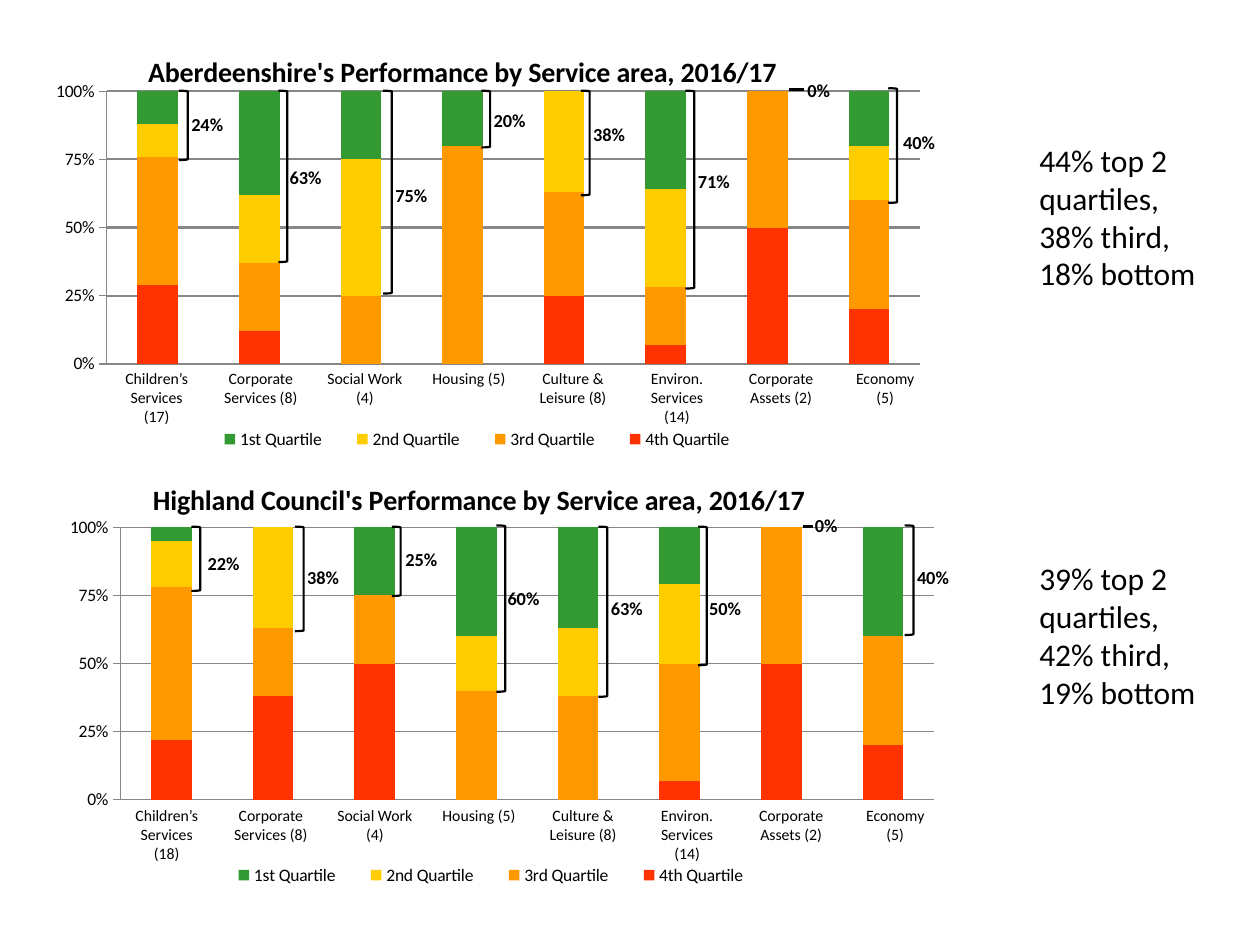
from lxml import etree
from pptx import Presentation
from pptx import util as u
from pptx.chart.data import CategoryChartData
from pptx.dml.color import RGBColor
from pptx.enum import chart as charts, shapes, text
from pptx.oxml.ns import qn

Inches, Pt = u.Inches, u.Pt
COLORS = {
    "ink": "000000", "grid": "868686",
    "4th Quartile": "FF3300", "3rd Quartile": "FF9900",
    "2nd Quartile": "FFCC00", "1st Quartile": "339933",
}
NO_GRID_STYLE = "{2D5ABB26-0587-4C30-8999-92F81FD0307C}"
CHART_SIZE = (7.22, 3.43)
TABLE_SIZE = (6.61, 0.67)
BRACKET_WIDTH = 0.07

# Each mark: bracket left, top and height, then its share and the label's left and top.
# A mark without height is a dash.
PANELS = [
    {
        "title": "Aberdeenshire's Performance by Service area, 2016/17",
        "chart_at": (0.32, 0.21), "title_at": (0.113, 0.05), "grid_width": 1.25,
        "values": {
            "4th Quartile": (0.29, 0.12, 0, 0, 0.25, 0.07, 0.5, 0.2),
            "3rd Quartile": (0.47, 0.25, 0.25, 0.8, 0.38, 0.21, 0.5, 0.4),
            "2nd Quartile": (0.12, 0.25, 0.5, 0, 0.38, 0.36, 0, 0.2),
            "1st Quartile": (0.12, 0.38, 0.25, 0.2, 0, 0.36, 0, 0.2),
        },
        "table_at": (0.83, 2.88), "children_count": 17,
        "summary": "44% top 2 quartiles, 38% third, 18% bottom", "summary_top": 1.07,
        "dash": (0.12, 1.75),
        "marks": [
            (1.42, 0.72, 0.55, "24%", 1.42, 0.85),
            (2.21, 0.72, 1.36, "63%", 2.2, 1.27),
            (3.04, 0.72, 1.61, "75%", 3.04, 1.41),
            (3.82, 0.72, 0.45, "20%", 3.82, 0.82),
            (4.61, 0.72, 0.83, "38%", 4.61, 0.93),
            (5.44, 0.72, 1.57, "71%", 5.44, 1.3),
            (6.26, 0.71, 0, "0%", 6.31, 0.58),
            (7.05, 0.7, 0.91, "40%", 7.07, 0.99),
        ],
    },
    {
        "title": "Highland Council's Performance by Service area, 2016/17",
        "chart_at": (0.43, 3.67), "title_at": (0.103, 0.03), "grid_width": 0.75,
        "values": {
            "4th Quartile": (0.22, 0.38, 0.5, 0, 0, 0.07, 0.5, 0.2),
            "3rd Quartile": (0.56, 0.25, 0.25, 0.4, 0.38, 0.43, 0.5, 0.4),
            "2nd Quartile": (0.17, 0.38, 0, 0.2, 0.25, 0.29, 0, 0),
            "1st Quartile": (0.06, 0, 0.25, 0.4, 0.38, 0.21, 0, 0.4),
        },
        "table_at": (0.91, 6.35), "children_count": 18,
        "summary": "39% top 2 quartiles, 42% third, 19% bottom", "summary_top": 4.39,
        "dash": (0.08, 1.5),
        "marks": [
            (1.52, 4.18, 0.51, "22%", 1.55, 4.33),
            (2.34, 4.18, 0.83, "38%", 2.34, 4.44),
            (3.11, 4.18, 0.55, "25%", 3.12, 4.3),
            (3.94, 4.17, 1.32, "60%", 3.93, 4.61),
            (4.75, 4.18, 1.35, "63%", 4.75, 4.69),
            (5.54, 4.18, 1.1, "50%", 5.53, 4.69),
            (6.37, 4.18, 0, "0%", 6.37, 4.03),
            (7.18, 4.17, 0.87, "40%", 7.18, 4.44),
        ],
    },
]


def inches(*lengths):
    return [Inches(length) for length in lengths]


def set_font(font, size, bold=False):
    formats = {"name": "Calibri", "size": Pt(size), "bold": bold}
    for name, value in formats.items():
        setattr(font, name, value)
    font.color.rgb = RGBColor.from_string(COLORS["ink"])


def set_line(line, color, width):
    line.color.rgb = RGBColor.from_string(COLORS[color])
    line.width = Pt(width)


def place_part(part, index, target=None, **fractions):
    """Fix a chart part's position as fractions of the chart."""
    for old in part.findall(qn("c:layout")):
        part.remove(old)
    layout = etree.Element(qn("c:layout"))
    part.insert(index, layout)
    manual = etree.SubElement(layout, qn("c:manualLayout"))
    settings = {"layoutTarget": target} if target else {}
    settings.update(xMode="edge", yMode="edge", **fractions)
    for name, value in settings.items():
        etree.SubElement(manual, qn(f"c:{name}")).set("val", str(value))


def add_quartile_chart(page, panel):
    data = CategoryChartData(number_format="0%")
    data.categories = [str(number) for number in range(1, 9)]
    for name, values in panel["values"].items():
        data.add_series(name, values)
    chart = page.shapes.add_chart(charts.XL_CHART_TYPE.COLUMN_STACKED,
                                  *inches(*panel["chart_at"], *CHART_SIZE), data).chart
    set_font(chart.font, 10)
    plot = chart.plots[0]
    plot.gap_width, plot.overlap, plot.vary_by_categories = 150, 100, False
    for series in plot.series:
        series.format.fill.solid()
        series.format.fill.fore_color.rgb = RGBColor.from_string(COLORS[series.name])

    chart.category_axis.visible = False
    axis = chart.value_axis
    formats = {"minimum_scale": 0, "maximum_scale": 1, "major_unit": 0.25,
               "major_tick_mark": charts.XL_TICK_MARK.OUTSIDE, "has_major_gridlines": True}
    for name, value in formats.items():
        setattr(axis, name, value)
    axis.tick_labels.number_format = "0%"
    axis.tick_labels.number_format_is_linked = False
    set_line(axis.format.line, "grid", 0.75)
    set_line(axis.major_gridlines.format.line, "grid", panel["grid_width"])

    chart.has_title = True
    para = chart.chart_title.text_frame.paragraphs[0]
    span = para.add_run()
    span.text = panel["title"]
    set_font(span.font, 16, bold=True)
    chart.has_legend = True
    chart.legend.position = charts.XL_LEGEND_POSITION.RIGHT
    chart.legend.include_in_layout = False
    set_font(chart.legend.font, 10)

    find = lambda name: chart.element.find(f".//{qn(name)}")
    title_x, title_y = panel["title_at"]
    place_part(find("c:title"), 1, x=title_x, y=title_y)
    place_part(find("c:plotArea"), 0, "inner", x=0.073, y=0.15, w=0.894, h=0.631)
    place_part(find("c:legend"), 1, x=0.17, y=0.92, w=0.62, h=0.07)


def add_service_table(page, panel):
    services = [f"Children’s Services ({panel['children_count']})",
                "Corporate Services (8)", "Social Work (4)", "Housing (5)",
                "Culture & Leisure (8)", "Environ. Services (14)",
                "Corporate Assets (2)", "Economy (5)"]
    frame = page.shapes.add_table(1, len(services), *inches(*panel["table_at"], *TABLE_SIZE))
    table = frame.table
    table.first_row = table.horz_banding = False
    next(frame.element.iter(qn("a:tableStyleId"))).text = NO_GRID_STYLE
    for cell, service in zip(table.rows[0].cells, services):
        cell.fill.background()
        cell.text = service
        para = cell.text_frame.paragraphs[0]
        para.alignment = text.PP_ALIGN.CENTER
        set_font(para.runs[0].font, 9)


def add_text(page, wording, place, size, bold=False):
    box = page.shapes.add_textbox(*inches(*place))
    box.text_frame.word_wrap = True
    span = box.text_frame.paragraphs[0].add_run()
    span.text = wording
    set_font(span.font, size, bold)


def add_bracket(page, left, top, height):
    bracket = page.shapes.add_shape(shapes.MSO_SHAPE.RIGHT_BRACKET,
                                    *inches(left, top, BRACKET_WIDTH, height))
    bracket.shadow.inherit = False
    bracket.fill.background()
    set_line(bracket.line, "ink", 1.25)


def add_dash(page, left, top, length, width):
    dash = page.shapes.add_connector(shapes.MSO_CONNECTOR.STRAIGHT,
                                     *inches(left, top, left + length, top))
    set_line(dash.line, "ink", width)
    etree.SubElement(dash.element.spPr, qn("a:effectLst"))


def add_marks(page, panel):
    for left, top, height, share, label_left, label_top in panel["marks"]:
        if height:
            add_bracket(page, left, top, height)
        else:
            add_dash(page, left, top, *panel["dash"])
        add_text(page, share, (label_left, label_top, 0.47, 0.28), 10.5, bold=True)


def main():
    deck = Presentation()
    deck.slide_width, deck.slide_height = inches(10, 7.5)
    page = deck.slides.add_slide(deck.slide_layouts[6])
    for add_part in (add_quartile_chart, add_service_table, add_marks):
        for panel in PANELS:
            add_part(page, panel)
    for panel in PANELS:
        add_text(page, panel["summary"], (8.15, panel["summary_top"], 1.57, 1.31), 18)
    deck.save("out.pptx")


if __name__ == "__main__":
    main()
